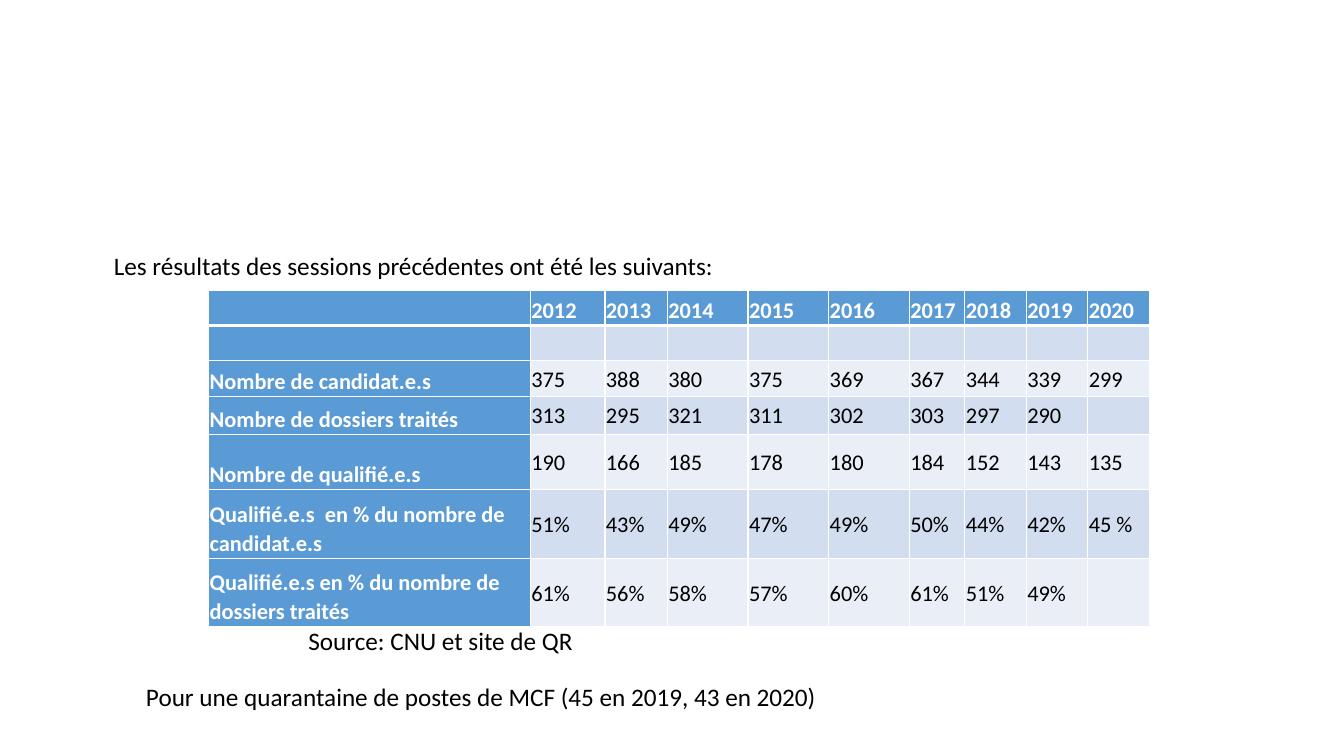
from dataclasses import dataclass

from lxml import etree
from pptx import Presentation
from pptx.dml.color import RGBColor
from pptx.enum.text import MSO_ANCHOR, MSO_AUTO_SIZE
from pptx.oxml.ns import qn
from pptx.slide import Slide
from pptx.table import _Cell
from pptx.text.text import TextFrame
from pptx.util import Inches, Pt

TOP, MIDDLE, BOTTOM = MSO_ANCHOR.TOP, MSO_ANCHOR.MIDDLE, MSO_ANCHOR.BOTTOM
FIT_SHAPE = MSO_AUTO_SIZE.SHAPE_TO_FIT_TEXT


@dataclass(frozen=True)
class Theme:
    font: str = "Calibri"
    note_size: int = 18
    table_size: int = 16
    text: str = "000000"
    white: str = "FFFFFF"
    heading: str = "5B9BD5"
    dark_band: str = "D2DEEF"
    light_band: str = "EAEFF7"
    border: int = 1
    header_border: int = 3


@dataclass(frozen=True)
class Note:
    text: str
    left: float
    top: float
    width: float
    anchor: MSO_ANCHOR = TOP
    wrap: bool = True


@dataclass(frozen=True)
class ResultRow:
    label: str
    height: float
    values: tuple[str, ...] = ()


THEME = Theme()
NOTE_HEIGHT = 0.4
CELL_MARGIN = 0.01
CELL_LINE_SPACING = 1.07
TABLE_LEFT, TABLE_TOP = 2.07, 2.88
COLUMN_WIDTHS = (3.19, 0.74, 0.62, 0.8, 0.8, 0.8, 0.55, 0.61, 0.61, 0.61)

NOTES = (
    Note("Les résultats des sessions précédentes ont été les suivants:",
         1.03, 2.43, 6.22, anchor=MIDDLE, wrap=False),
    Note("Source: CNU et site de QR", 2.96, 6.15, 5.47),
    Note("Pour une quarantaine de postes de MCF (45 en 2019, 43 en 2020)", 1.35, 6.71, 9.57),
)

RESULTS = (
    ResultRow("", 0.35, tuple(str(year) for year in range(2012, 2021))),
    ResultRow("", 0.35),
    ResultRow("Nombre de candidat.e.s", 0.35,
              ("375", "388", "380", "375", "369", "367", "344", "339", "299")),
    ResultRow("Nombre de dossiers traités", 0.38,
              ("313", "295", "321", "311", "302", "303", "297", "290")),
    ResultRow("Nombre de qualifié.e.s", 0.55,
              ("190", "166", "185", "178", "180", "184", "152", "143", "135")),
    ResultRow("Qualifié.e.s  en % du nombre de candidat.e.s", 0.68,
              ("51%", "43%", "49%", "47%", "49%", "50%", "44%", "42%", "45 %")),
    ResultRow("Qualifié.e.s en % du nombre de dossiers traités", 0.68,
              ("61%", "56%", "58%", "57%", "60%", "61%", "51%", "49%")),
)


def write_text(frame: TextFrame, text: str, *, size: int, color: str = THEME.text,
               bold: bool = False, line_spacing: float | None = None) -> None:
    paragraph = frame.paragraphs[0]
    paragraph.line_spacing = line_spacing
    run = paragraph.add_run()
    run.text = text
    run.font.name = THEME.font
    run.font.size = Pt(size)
    run.font.bold = bold
    run.font.color.rgb = RGBColor.from_string(color)


def add_note(slide: Slide, note: Note) -> None:
    shape = slide.shapes.add_textbox(Inches(note.left), Inches(note.top),
                                     Inches(note.width), Inches(NOTE_HEIGHT))
    frame = shape.text_frame
    frame.word_wrap = note.wrap
    frame.auto_size = FIT_SHAPE
    frame.vertical_anchor = note.anchor
    write_text(frame, note.text, size=THEME.note_size)


def set_borders(cell: _Cell, top: int, bottom: int) -> None:
    properties = cell._tc.get_or_add_tcPr()
    widths = {"lnL": THEME.border, "lnR": THEME.border, "lnT": top, "lnB": bottom}
    for side, width in widths.items():
        line = etree.SubElement(properties, qn(f"a:{side}"), w=str(Pt(width)))
        fill = etree.SubElement(line, qn("a:solidFill"))
        etree.SubElement(fill, qn("a:srgbClr"), val=THEME.white)


def format_cell(cell: _Cell, text: str, row: int, column: int) -> None:
    is_heading = row == 0 or column == 0
    band = THEME.dark_band if row % 2 else THEME.light_band
    set_borders(cell,
                top=THEME.header_border if row == 1 else THEME.border,
                bottom=THEME.header_border if row == 0 else THEME.border)
    cell.fill.solid()
    cell.fill.fore_color.rgb = RGBColor.from_string(THEME.heading if is_heading else band)
    cell.vertical_anchor = BOTTOM if is_heading else MIDDLE
    margin = Inches(CELL_MARGIN)
    cell.margin_left = cell.margin_right = cell.margin_top = cell.margin_bottom = margin
    if text:
        write_text(cell.text_frame, text, size=THEME.table_size, bold=is_heading,
                   color=THEME.white if is_heading else THEME.text,
                   line_spacing=CELL_LINE_SPACING)


def add_results_table(slide: Slide) -> None:
    table = slide.shapes.add_table(
        len(RESULTS), len(COLUMN_WIDTHS), Inches(TABLE_LEFT), Inches(TABLE_TOP),
        Inches(sum(COLUMN_WIDTHS)), Inches(sum(result.height for result in RESULTS))).table
    for column, width in enumerate(COLUMN_WIDTHS):
        table.columns[column].width = Inches(width)
    for row, result in enumerate(RESULTS):
        table.rows[row].height = Inches(result.height)
        texts = (result.label, *result.values)
        for column in range(len(COLUMN_WIDTHS)):
            text = texts[column] if column < len(texts) else ""
            format_cell(table.cell(row, column), text, row, column)


def main() -> None:
    presentation = Presentation()
    presentation.slide_width = Inches(13.33)
    presentation.slide_height = Inches(7.5)
    slide = presentation.slides.add_slide(presentation.slide_layouts[6])
    add_results_table(slide)
    for note in NOTES:
        add_note(slide, note)
    presentation.save("out.pptx")


if __name__ == "__main__":
    main()
